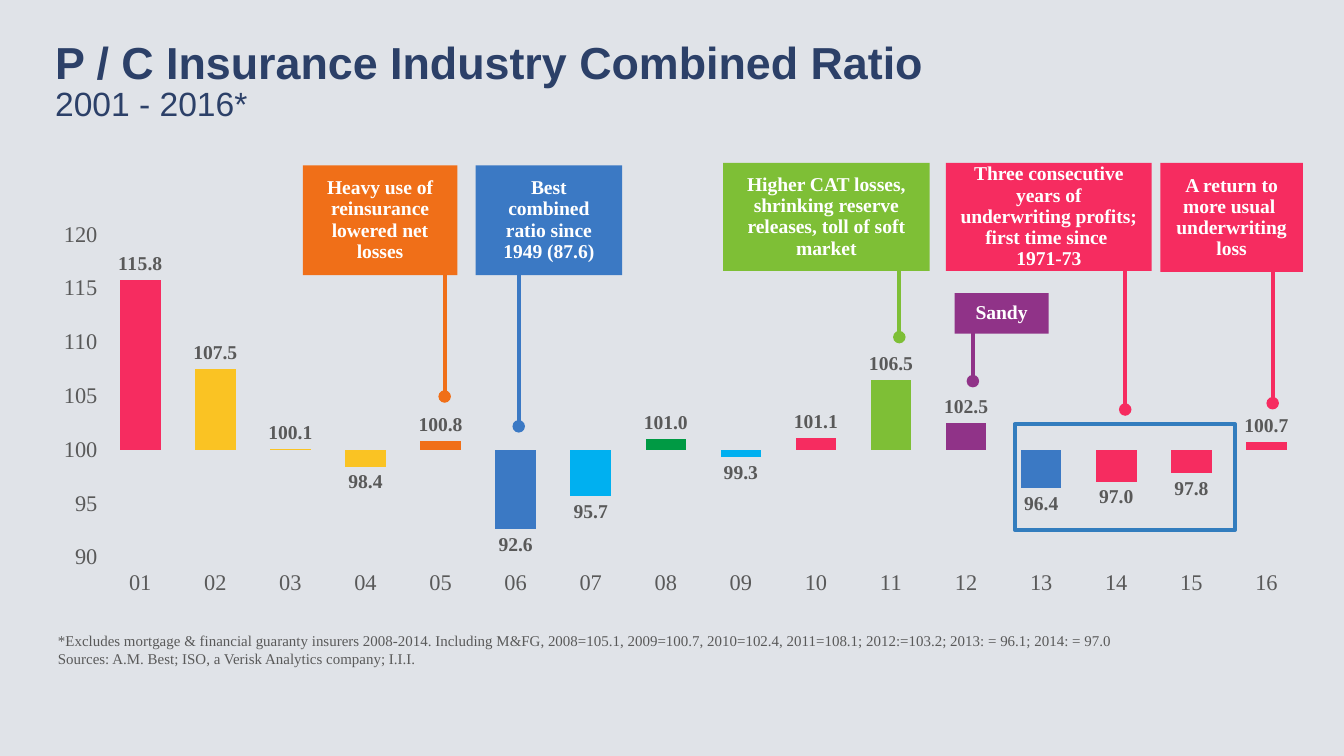
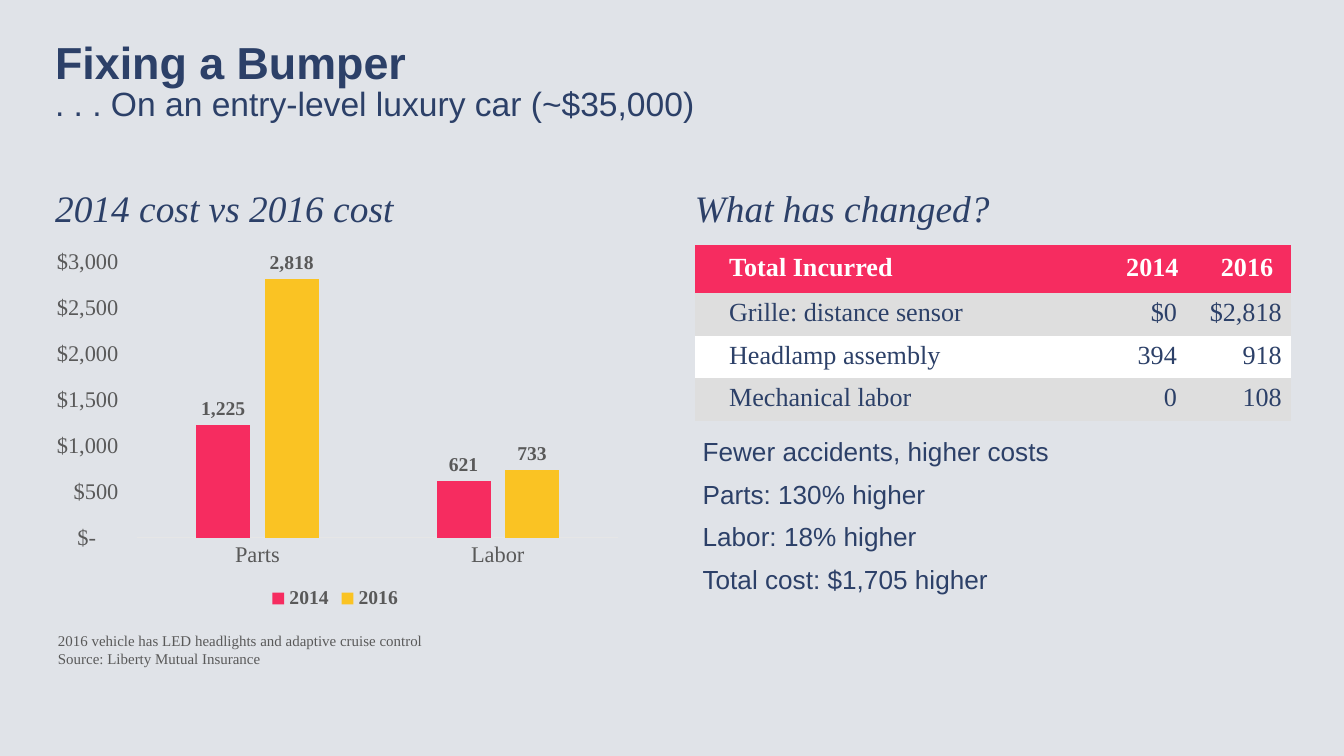
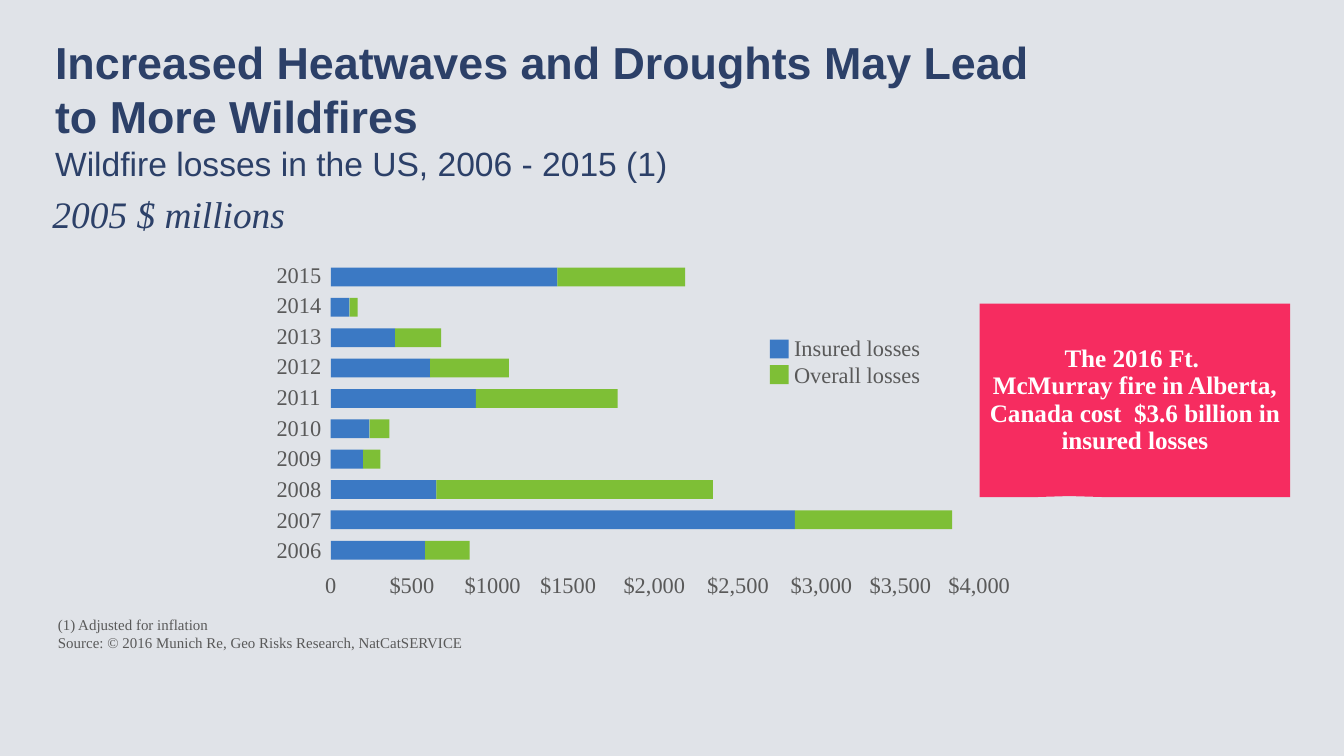
from copy import deepcopy
from dataclasses import dataclass

from lxml import etree
from pptx import Presentation
from pptx.chart import data as chart_data
from pptx.dml import color
from pptx.enum import chart as charts, shapes, text
from pptx.oxml import ns
from pptx.util import Pt


def rgb(value):
    return color.RGBColor.from_string(value)


@dataclass(frozen=True)
class Theme:
    background = rgb("E0E3E8")
    navy = rgb("2C4068")
    gray = rgb("595959")
    white = rgb("FFFFFF")
    band = rgb("DEDEDE")
    axis = rgb("E6E6E6")
    frame = rgb("337DBE")
    red = rgb("F62C60")
    yellow = rgb("FAC323")
    orange = rgb("F06F18")
    blue = rgb("3B79C4")
    sky = rgb("00B0F0")
    green = rgb("009A44")
    lime = rgb("7EBF36")
    purple = rgb("903388")
    sans = "Arial"
    serif = "Times New Roman"
    title = 24
    heading = 20
    subtitle = 18
    body = 14
    remark = 13.5
    label = 12
    small = 10.5
    footer = 8
    leading = 1.2
    line_width = 2.25


THEME = Theme()
ALIGN = text.PP_ALIGN
NO_GRID_STYLE = "{2D5ABB26-0587-4C30-8999-92F81FD0307C}"
DOLLARS = r'_("$"* #,##0_);_("$"* \(#,##0\);_("$"* "-"??_);_(@_)'


def apply(target, values):
    for name, value in values.items():
        setattr(target, name, value)


def points(*lengths):
    return [Pt(length) for length in lengths]


def set_font(font, size, shade, name=THEME.serif, bold=False, italic=False):
    apply(font, {"name": name, "size": Pt(size), "bold": bold, "italic": italic})
    font.color.rgb = shade


def set_fill(target, shade):
    target.fill.solid()
    target.fill.fore_color.rgb = shade


class Deck:
    def __init__(self, theme):
        self.theme = theme
        self.presentation = Presentation()
        apply(self.presentation, {"slide_width": Pt(720), "slide_height": Pt(405)})
        set_fill(self.presentation.slide_master.background, theme.background)
        self.slide = None

    def new_slide(self, title, subtitle, subtitle_top=44.6):
        theme = self.theme
        self.slide = self.presentation.slides.add_slide(self.presentation.slide_layouts[6])
        self.text([title], (29.5, 18.7, 661, 62), theme.title, theme.navy,
                  name=theme.sans, bold=True)
        self.text([subtitle], (29.5, subtitle_top, 661, 44.6), theme.subtitle, theme.navy,
                  name=theme.sans)

    def fill_text(self, frame, lines, size, shade, align=ALIGN.LEFT, spacing=None, gap=0,
                  **font):
        for index, line in enumerate(lines):
            paragraph = frame.add_paragraph() if index else frame.paragraphs[0]
            paragraph.text = line
            apply(paragraph, {
                "alignment": align,
                "line_spacing": spacing or Pt(size * self.theme.leading),
                "space_before": Pt(gap if index else 0),
            })
            for run in paragraph.runs:
                set_font(run.font, size, shade, **font)
            for line_break in paragraph._p.findall(ns.qn("a:br")):
                line_break.insert(0, deepcopy(paragraph.runs[0]._r.rPr))

    def text(self, lines, box, size, shade, wrap=True, **style):
        frame = self.slide.shapes.add_textbox(*points(*box)).text_frame
        apply(frame, {"margin_left": 0, "margin_top": 0, "margin_right": 0,
                      "margin_bottom": 0, "word_wrap": wrap})
        self.fill_text(frame, lines, size, shade, **style)

    def heading(self, line, left, top):
        self.text([line], (left, top, 315, 34), self.theme.heading, self.theme.navy, italic=True)

    def footer(self, line, top=338.4):
        self.text([line], (31, top, 605, 24.5), self.theme.footer, self.theme.gray)

    def shape(self, box, fill=None, outline=None, kind=shapes.MSO_SHAPE.RECTANGLE):
        shape = self.slide.shapes.add_shape(kind, *points(*box))
        shape.shadow.inherit = False
        if fill is None:
            shape.fill.background()
        else:
            set_fill(shape, fill)
        if outline is None:
            shape.line.fill.background()
        else:
            shape.line.color.rgb = outline
            shape.line.width = Pt(self.theme.line_width)
        return shape

    def callout(self, line, box, fill, size, margin=7.2, **options):
        shape = self.shape(box, fill, **options)
        frame = shape.text_frame
        apply(frame, {"margin_left": Pt(margin), "margin_right": Pt(margin),
                      "margin_top": Pt(3), "margin_bottom": Pt(3), "word_wrap": True,
                      "vertical_anchor": text.MSO_ANCHOR.MIDDLE})
        self.fill_text(frame, [line], size, self.theme.white, align=ALIGN.CENTER,
                       spacing=0.9, bold=True)
        return shape

    def pin(self, x, top, bottom, shade):
        connector = self.slide.shapes.add_connector(
            shapes.MSO_CONNECTOR.STRAIGHT, *points(x, top, x, bottom))
        connector.line.color.rgb = shade
        connector.line.width = Pt(self.theme.line_width)
        etree.SubElement(connector.line._get_or_add_ln(), ns.qn("a:tailEnd"), type="oval")
        etree.SubElement(connector._element.spPr, ns.qn("a:effectLst"))

    def column_chart(self, box, categories, series, layout, scale, gap, overlap=0,
                     label_format="#,##0"):
        theme = self.theme
        source = chart_data.CategoryChartData()
        source.categories = categories
        for name, values, _ in series:
            source.add_series(name, values)
        chart = self.slide.shapes.add_chart(
            charts.XL_CHART_TYPE.COLUMN_CLUSTERED, *points(*box), source).chart
        apply(chart, {"has_title": False, "has_legend": False})
        set_font(chart.font, theme.label, theme.gray)
        plot = chart.plots[0]
        apply(plot, {"gap_width": gap, "overlap": overlap, "vary_by_categories": False,
                     "has_data_labels": True})
        labels = plot.data_labels
        apply(labels, {"show_value": True, "number_format": label_format,
                       "number_format_is_linked": False,
                       "position": charts.XL_LABEL_POSITION.OUTSIDE_END})
        set_font(labels.font, theme.small, theme.gray, bold=True)
        for item, (_, _, shade) in zip(plot.series, series):
            item.invert_if_negative = False
            set_fill(item.format, shade)
        for axis in (chart.category_axis, chart.value_axis):
            apply(axis, {"has_major_gridlines": False,
                         "major_tick_mark": charts.XL_TICK_MARK.NONE,
                         "minor_tick_mark": charts.XL_TICK_MARK.NONE})
            set_font(axis.tick_labels.font, theme.label, theme.gray)
            axis.format.line.fill.background()
        apply(chart.value_axis, dict(zip(
            ("minimum_scale", "maximum_scale", "major_unit"), scale)))
        self.place_plot(chart, layout)
        return chart

    def place_plot(self, chart, layout):
        area = chart._chartSpace.find(".//" + ns.qn("c:plotArea"))
        for old in area.findall(ns.qn("c:layout")):
            area.remove(old)
        holder = etree.Element(ns.qn("c:layout"))
        manual = etree.SubElement(holder, ns.qn("c:manualLayout"))
        settings = {"layoutTarget": "inner", "xMode": "edge", "yMode": "edge",
                    **dict(zip("xywh", layout))}
        for name, value in settings.items():
            etree.SubElement(manual, ns.qn("c:" + name), val=str(value))
        area.insert(0, holder)

    def table(self, rows, left, top, widths, heights):
        theme = self.theme
        table = self.slide.shapes.add_table(
            len(rows), len(widths), *points(left, top, sum(widths), sum(heights))).table
        table.horz_banding = False
        table._tbl.tblPr.find(ns.qn("a:tableStyleId")).text = NO_GRID_STYLE
        for column, width in zip(table.columns, widths):
            column.width = Pt(width)
        for index, (row, height) in enumerate(zip(rows, heights)):
            table.rows[index].height = Pt(height)
            header = index == 0
            fill = theme.red if header else (theme.white, theme.band)[index % 2]
            for place, line in enumerate(row):
                cell = table.cell(index, place)
                set_fill(cell, fill)
                left_aligned = place == 0 or header and place == 2
                apply(cell, {
                    "margin_left": Pt(18.4 if left_aligned else 0),
                    "margin_right": Pt(4.3 if header else 5.2),
                    "margin_top": Pt(3), "margin_bottom": Pt(3),
                    "vertical_anchor": text.MSO_ANCHOR.MIDDLE if header else text.MSO_ANCHOR.TOP,
                })
                self.fill_text(cell.text_frame, [line], theme.body,
                               theme.white if header else theme.navy,
                               align=ALIGN.LEFT if left_aligned else ALIGN.RIGHT,
                               spacing=0.95 if header else 1.0, bold=header)


def combined_ratio(deck):
    theme = deck.theme
    deck.new_slide("P / C Insurance Industry Combined Ratio", "2001 - 2016*")
    deck.footer(
        "*Excludes mortgage & financial guaranty insurers 2008-2014. Including M&FG, "
        "2008=105.1, 2009=100.7, 2010=102.4, 2011=108.1; 2012:=103.2; 2013: = 96.1; "
        "2014: = 97.0\nSources: A.M. Best; ISO, a Verisk Analytics company; I.I.I.")
    ratios = (115.8, 107.5, 100.1, 98.4, 100.8, 92.6, 95.7, 101, 99.3, 101.1, 106.5,
              102.5, 96.4, 97, 97.8, 100.7)
    years = [f"{year:02}" for year in range(1, 17)]
    chart = deck.column_chart(
        (28.8, 115.9, 673.2, 203), years, [("Series 1", ratios, theme.red)],
        layout=(0.039, 0.048, 0.956, 0.852), scale=(90, 120, 5), gap=85,
        label_format="#,##0.0")
    chart.value_axis.crosses_at = 100
    chart.category_axis.tick_label_position = charts.XL_TICK_LABEL_POSITION.LOW
    year_colours = {
        "02": theme.yellow, "03": theme.yellow, "04": theme.yellow, "05": theme.orange,
        "06": theme.blue, "07": theme.sky, "08": theme.green, "09": theme.sky,
        "11": theme.lime, "12": theme.purple, "13": theme.blue}
    for year, shade in year_colours.items():
        set_fill(chart.plots[0].series[0].points[years.index(year)].format, shade)

    deck.shape((543.6, 227.3, 118.1, 56.5), outline=theme.frame)
    notes = (
        ("Heavy use of reinsurance lowered net losses",
         (162.2, 88.6, 82.8, 58.8), theme.orange, (238.2, 145.4, 212.4)),
        ("Best combined ratio since 1949 (87.6)",
         (254.8, 88.6, 78.5, 58.8), theme.blue, (277.9, 145.4, 228.4)),
        ("Higher CAT losses, shrinking reserve releases, toll of soft market",
         (387.4, 87.3, 110.6, 57.8), theme.lime, (481.8, 134.6, 180.6)),
        ("Sandy", (511.4, 157, 50.4, 21.8), theme.purple, (521.2, 175.7, 204.2)),
        ("Three consecutive years of underwriting profits; first time since \n1971-73",
         (506.8, 87.3, 110.2, 57.8), theme.red, (602.8, 136.8, 219.4)),
        ("A return to more usual  underwriting loss",
         (621.6, 87.3, 76.4, 58.3), theme.red, (681.8, 136.8, 216)),
    )
    for line, box, shade, pin in notes:
        deck.pin(*pin, shade)
        deck.callout(line, box, shade, theme.small)


def bumper_costs(deck):
    theme = deck.theme
    deck.new_slide("Fixing a Bumper", ". . . On an entry-level luxury car (~$35,000)")
    deck.heading("2014 cost vs 2016 cost", 29.5, 99.4)
    deck.heading("What has changed?", 372.2, 99.4)
    chart = deck.column_chart(
        (25.9, 132.5, 307.4, 196.6), ("Parts", "Labor"),
        [("2014", (1225, 621), theme.red), ("2016", (2818, 733), theme.yellow)],
        layout=(0.155, 0.04, 0.838, 0.752), scale=(0, 3000, 500), gap=219, overlap=-27)
    apply(chart.value_axis.tick_labels,
          {"number_format": DOLLARS, "number_format_is_linked": False})
    chart.value_axis.major_tick_mark = charts.XL_TICK_MARK.OUTSIDE
    chart.category_axis.format.line.color.rgb = theme.axis
    chart.category_axis.format.line.width = Pt(0.75)
    chart.has_legend = True
    apply(chart.legend, {"position": charts.XL_LEGEND_POSITION.BOTTOM,
                         "include_in_layout": False})
    set_font(chart.legend.font, theme.small, theme.gray, bold=True)
    deck.table(
        (("Total Incurred", "2014", "2016"),
         ("Grille: distance sensor", "$0", "$2,818"),
         ("Headlamp assembly", "394", "918"),
         ("Mechanical labor", "0", "108")),
        372.2, 131, (212.4, 51.1, 56.2), (26, 22.8, 22.8, 22.8))
    deck.text(
        ("Fewer accidents, higher costs", "Parts: 130% higher", "Labor: 18% higher",
         "Total cost: $1,705 higher"),
        (376.4, 233.3, 314.6, 122.4), theme.body, theme.navy, name=theme.sans, gap=6)
    deck.footer("2016 vehicle has LED headlights and adaptive cruise control\n"
                "Source: Liberty Mutual Insurance")


def wildfire_losses(deck):
    theme = deck.theme
    deck.new_slide("Increased Heatwaves and Droughts May Lead \nto More Wildfires",
                   "Wildfire losses in the US, 2006 - 2015 (1)", subtitle_top=76.4)
    deck.heading("2005 $ millions", 28.1, 102.2)
    deck.footer("(1) Adjusted for inflation\n"
                "Source: © 2016 Munich Re, Geo Risks Research, NatCatSERVICE", top=330)
    callout = deck.callout(
        "The 2016 Ft. \nMcMurray fire in Alberta, Canada cost  $3.6 billion in insured losses",
        (524.8, 162.7, 166.3, 103.7), theme.red, theme.remark, margin=5,
        kind=shapes.MSO_SHAPE.RECTANGULAR_CALLOUT)
    callout.adjustments[0], callout.adjustments[1] = -0.212, 0.494

    label_style = {"size": theme.label, "shade": theme.gray, "wrap": False}
    deck.text([str(year) for year in range(2015, 2005, -1)],
              (148.2, 139.7, 24.5, 163.4), gap=2, **label_style)
    bar_left, bar_top, bar_step, bar_height = 177.2, 143.4, 16.26, 10.1
    bar_widths = (
        (121.4, 68.5), (10.1, 4.3), (34.5, 24.7), (53.2, 42.3), (77.8, 75.9),
        (20.8, 10.6), (17.4, 9.3), (56.6, 148.2), (248.7, 84.2), (50.6, 23.8))
    for index, (insured, overall) in enumerate(bar_widths):
        top = bar_top + index * bar_step
        deck.shape((bar_left, top, insured, bar_height), theme.blue)
        deck.shape((bar_left + insured, top, overall, bar_height), theme.lime)

    for top, shade in ((182, theme.blue), (195.7, theme.lime)):
        deck.shape((412.5, top, bar_height, bar_height), shade)
    deck.text(["Insured losses\nOverall losses"], (425.4, 179.3, 68.4, 28.8), **label_style)

    tick_width = 33
    ticks = (("0", 177.2), ("$500", 220.7), ("$1000", 264), ("$1500", 304.4),
             ("$2,000", 350.6), ("$2,500", 395.4), ("$3,000", 440.1), ("$3,500", 482.4),
             ("$4,000", 524.6))
    for line, centre in ticks:
        deck.text([line], (centre - tick_width / 2, 306, tick_width, 14.4),
                  align=ALIGN.CENTER, **label_style)


def main():
    deck = Deck(THEME)
    combined_ratio(deck)
    bumper_costs(deck)
    wildfire_losses(deck)
    deck.presentation.save("out.pptx")


if __name__ == "__main__":
    main()
